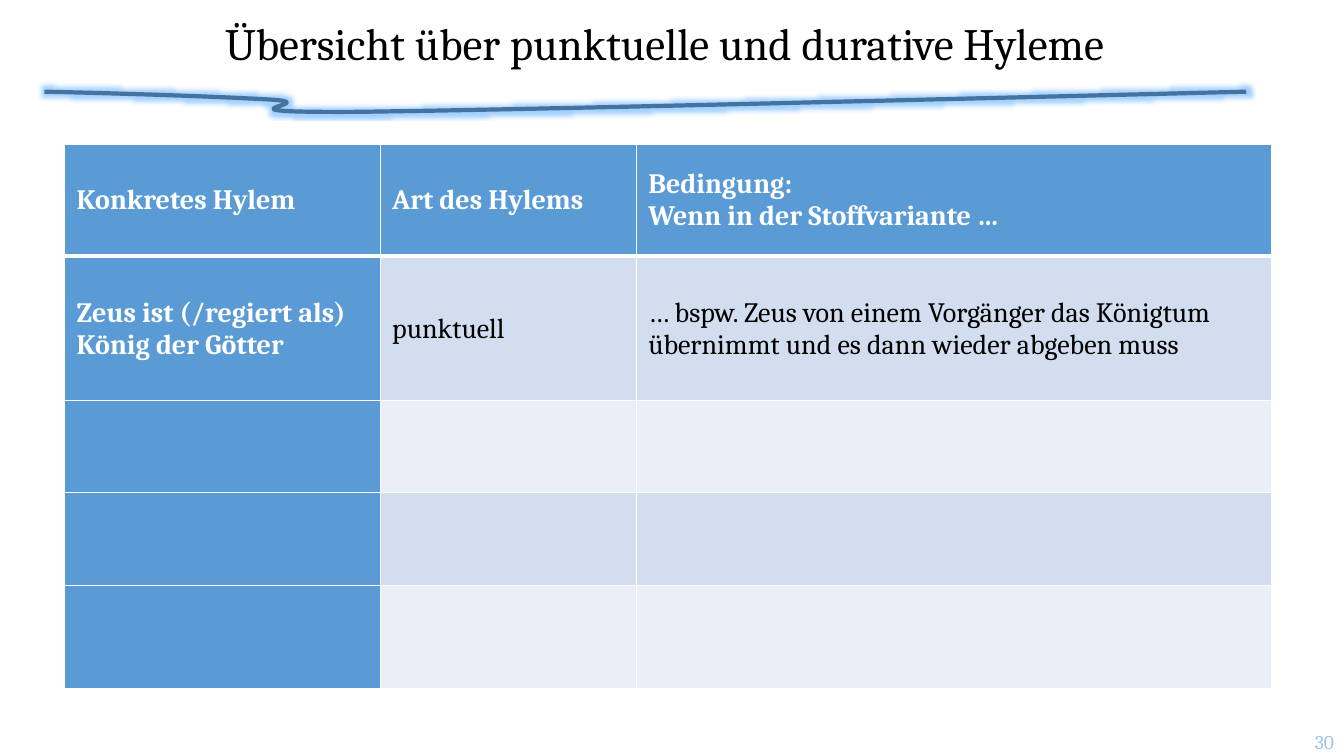
import pptx
import pptx.dml.color
import pptx.enum.text
import pptx.oxml
import pptx.oxml.ns
import pptx.util

inch = pptx.util.Inches
align = pptx.enum.text.PP_ALIGN
middle = pptx.enum.text.MSO_ANCHOR.MIDDLE
space = pptx.oxml.ns.nsdecls("a")
BLUE, WHITE, BLACK = "5B9BD5", "FFFFFF", "000000"
BANDS = ["D2DEEF", "EAEFF7"]


def hue(code):
    return pptx.dml.color.RGBColor.from_string(code)


def write(frame, text, size=20, color=BLACK, bold=False, side=align.LEFT):
    frame.text = text
    frame.word_wrap = True
    frame.vertical_anchor = middle
    for para in frame.paragraphs:
        para.alignment = side
        font = para.font
        for run in para.runs:
            font = run.font
            font.name = "Cambria"
            font.size = pptx.util.Pt(size)
            font.bold = bold
            font.color.rgb = hue(color)


deck = pptx.Presentation()
deck.slide_width, deck.slide_height = inch(13.33), inch(7.5)
wide, high = deck.slide_width, deck.slide_height
slide = deck.slides.add_slide(deck.slide_layouts[5])
shapes = slide.shapes

# Title
title = shapes.title
title.left, title.top = inch(0.46), 0
title.width, title.height = inch(12.27), inch(0.91)
write(title.text_frame, "Übersicht über punktuelle und durative Hyleme",
      size=32, side=align.CENTER)
title.text_frame.paragraphs[0].line_spacing = 0.9

# Glowing brush stroke, drawn as three Bézier curves
start = (0.44, 0.91)
curves = [
    [(1.31, 0.93), (2.19, 0.96), (2.71, 0.99)],
    [(3.23, 1.03), (1.95, 1.12), (3.56, 1.11)],
    [(5.17, 1.09), (8.76, 1.0), (12.36, 0.91)],
]
steps = 24
dots = []
knot = start
for one, two, end in curves:
    for step in range(1, steps + 1):
        t = step / steps
        s = 1 - t
        dots.append([inch(s**3 * a + 3 * s * s * t * b + 3 * s * t * t * c + t**3 * d)
                     for a, b, c, d in zip(knot, one, two, end)])
    knot = end
pen = shapes.build_freeform(inch(start[0]), inch(start[1]))
pen.add_line_segments(dots, close=False)
stroke = pen.convert_to_shape()
stroke.fill.background()
stroke.line.color.rgb = hue("43739E")
stroke.line.width = pptx.util.Pt(3)
stroke._element.spPr.append(pptx.oxml.parse_xml(
    f'<a:effectLst {space}><a:glow rad="63500"><a:srgbClr val="3399FF">'
    '<a:alpha val="45000"/></a:srgbClr></a:glow></a:effectLst>'))

# Table
cols = [3.13, 2.54, 6.3]
rows = [1.11, 1.43, 0.92, 0.92, 1.02]
texts = [
    ["Konkretes Hylem", "Art des Hylems", "Bedingung:\nWenn in der Stoffvariante …"],
    ["Zeus ist (/regiert als) König der Götter", "punktuell",
     "… bspw. Zeus von einem Vorgänger das Königtum übernimmt "
     "und es dann wieder abgeben muss"],
]
table = shapes.add_table(len(rows), len(cols), inch(0.64), inch(1.43),
                         inch(sum(cols)), inch(sum(rows))).table
for col, size in zip(table.columns, cols):
    col.width = inch(size)
for r, size in enumerate(rows):
    table.rows[r].height = inch(size)
    for c in range(len(cols)):
        cell = table.cell(r, c)
        head = r == 0 or c == 0
        if r < len(texts):
            write(cell.text_frame, texts[r][c], color=WHITE if head else BLACK, bold=head)
        cell.vertical_anchor = middle
        cell.margin_left = inch(0.12)
        cell.margin_right = inch(0 if c == 2 else 0.07)
        cell.margin_top = inch(0.05)
        cell.margin_bottom = inch(0.02 if r == 1 else 0.05)
        # Borders: the rule below the header is thicker
        for edge in "LRTB":
            thick = (r, edge) in [(0, "B"), (1, "T")]
            cell._tc.get_or_add_tcPr().append(pptx.oxml.parse_xml(
                f'<a:ln{edge} {space} w="{pptx.util.Pt(3 if thick else 1)}"><a:solidFill>'
                f'<a:srgbClr val="{WHITE}"/></a:solidFill></a:ln{edge}>'))
        cell.fill.solid()
        cell.fill.fore_color.rgb = hue(BLUE if head else BANDS[(r - 1) % 2])

# Page number in the bottom right corner
box = [inch(0.73), inch(0.29)]
page = shapes.add_textbox(wide - box[0], high - box[1], *box)
write(page.text_frame, "30", size=14, color="9DC3E6", side=align.RIGHT)

deck.save("out.pptx")
